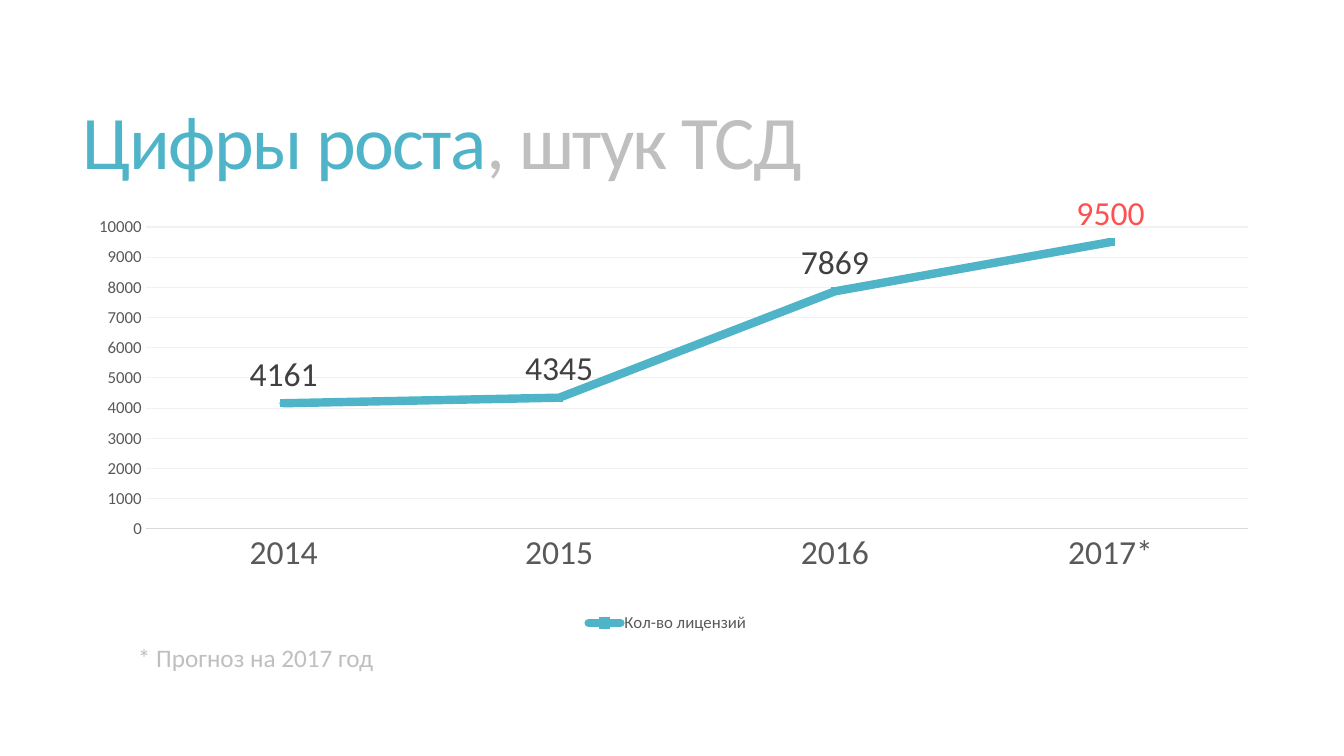
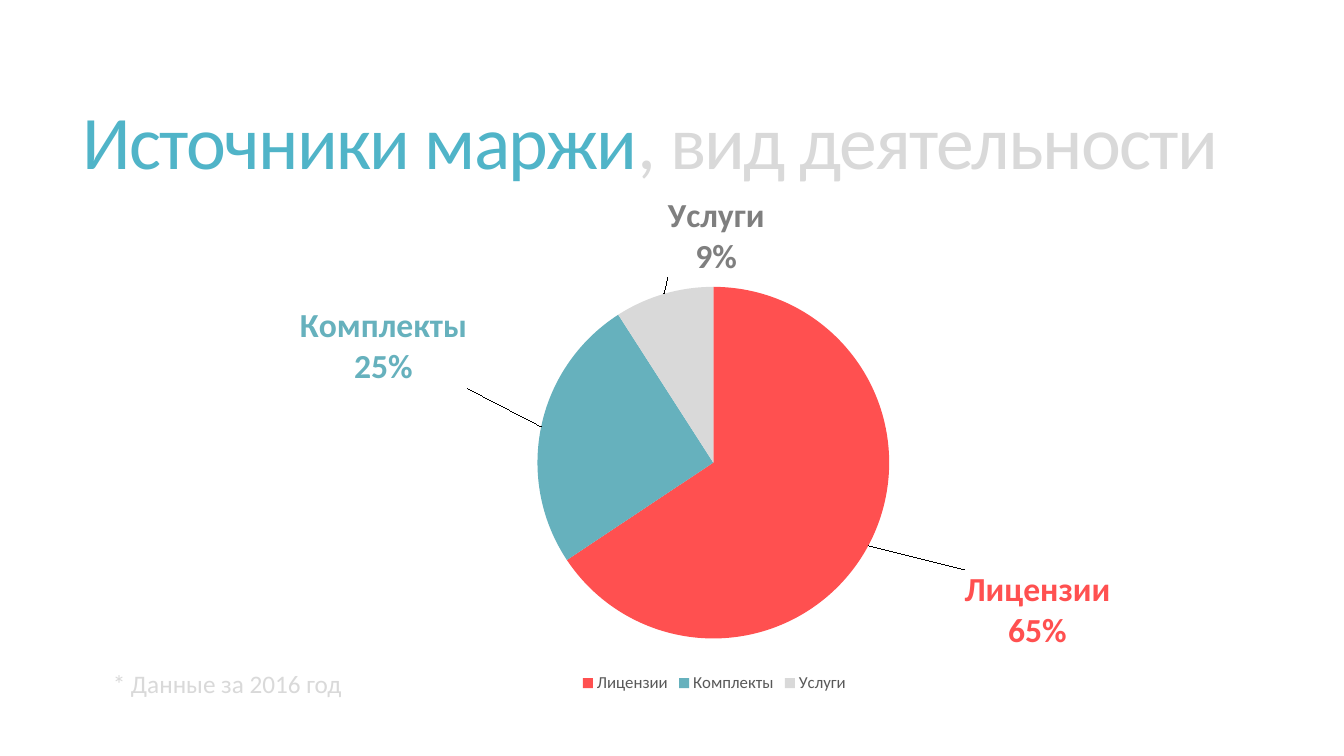
from dataclasses import dataclass

from lxml import etree
from pptx import Presentation
from pptx.chart.chart import Chart
from pptx.chart.data import CategoryChartData
from pptx.dml.color import RGBColor
from pptx.enum.chart import XL_CHART_TYPE, XL_LABEL_POSITION, XL_LEGEND_POSITION, XL_TICK_MARK
from pptx.enum.text import MSO_ANCHOR, MSO_AUTO_SIZE, PP_ALIGN
from pptx.oxml.ns import qn
from pptx.slide import Slide
from pptx.text.text import Font
from pptx.util import Inches, Pt

LINE, PIE = XL_CHART_TYPE.LINE, XL_CHART_TYPE.PIE
ABOVE, OUTSIDE = XL_LABEL_POSITION.ABOVE, XL_LABEL_POSITION.OUTSIDE_END
BOTTOM = XL_LEGEND_POSITION.BOTTOM
NO_TICK = XL_TICK_MARK.NONE
MIDDLE, LEFT = MSO_ANCHOR.MIDDLE, PP_ALIGN.LEFT
GROW = MSO_AUTO_SIZE.SHAPE_TO_FIT_TEXT

FACE = "Calibri"
TEAL, RED, SEA = "50B4C8", "FF5050", "66B1BD"
SILVER, PALE, FAINT = "BFBFBF", "D9D9D9", "F2F2F2"
DARK, INK, GREY = "404040", "595959", "7F7F7F"

Box = tuple[float, float, float, float]


@dataclass
class Page:
    lead: str
    rest: str
    tint: str
    note: str
    spot: Box


@dataclass
class Slice:
    name: str
    share: int
    fill: str
    ink: str
    shift: tuple[float, float]


GROWTH = Page("Цифры роста", ", штук ТСД", SILVER,
              "* Прогноз на 2017 год", (1.27, 6.32, 2.56, 0.4))
MARGIN = Page("Источники маржи", ", вид деятельности", PALE,
              "* Данные за 2016 год", (1.02, 6.58, 2.48, 0.4))

SALES = {"2014": 4161, "2015": 4345, "2016": 7869, "2017*": 9500}
SLICES = [
    Slice("Лицензии", 65, RED, RED, (0.08, 0.04)),
    Slice("Комплекты", 25, SEA, SEA, (-0.06, -0.07)),
    Slice("Услуги", 9, PALE, GREY, (0.09, -0.02)),
]


def color(code: str) -> RGBColor:
    return RGBColor.from_string(code)


def style(font: Font, size: float, code: str, bold: bool = False) -> None:
    font.name, font.size, font.bold = FACE, Pt(size), bold
    font.color.rgb = color(code)


def place(host: etree._Element, index: int, **parts: str | float) -> None:
    for old in host.findall(qn("c:layout")):
        host.remove(old)
    layout = etree.Element(qn("c:layout"))
    manual = etree.SubElement(layout, qn("c:manualLayout"))
    for tag, value in parts.items():
        etree.SubElement(manual, qn(f"c:{tag}")).set("val", str(value))
    host.insert(index, layout)


def frame(chart: Chart, box: Box) -> None:
    x, y, w, h = box
    area = chart._chartSpace.find(".//" + qn("c:plotArea"))
    place(area, 0, layoutTarget="inner", xMode="edge", yMode="edge", x=x, y=y, w=w, h=h)


def add_page(deck: Presentation, page: Page) -> Slide:
    slide = deck.slides.add_slide(deck.slide_layouts[5])
    title = slide.shapes.title
    title.left, title.top, title.width, title.height = map(Inches, (0.72, 0.55, 11.78, 1.81))
    title.text_frame.vertical_anchor = MIDDLE
    para = title.text_frame.paragraphs[0]
    para.alignment, para.line_spacing = LEFT, 0.85
    for text, code in ((page.lead, TEAL), (page.rest, page.tint)):
        run = para.add_run()
        run.text = text
        style(run.font, 54, code)
        run._r.get_or_add_rPr().set("spc", "-120")
    return slide


def add_note(slide: Slide, page: Page) -> None:
    text = slide.shapes.add_textbox(*map(Inches, page.spot)).text_frame
    text.word_wrap, text.auto_size = False, GROW
    text.text = page.note
    style(text.paragraphs[0].font, 18, page.tint)


def add_chart(slide: Slide, kind: XL_CHART_TYPE, box: Box, name: str,
              values: dict[str, int]) -> Chart:
    data = CategoryChartData()
    data.categories = list(values)
    data.add_series(name, list(values.values()))
    chart = slide.shapes.add_chart(kind, *map(Inches, box), data).chart
    style(chart.font, 10, "000000")
    chart.has_title, chart.has_legend = False, True
    chart.legend.position = BOTTOM
    chart.legend.include_in_layout = False
    style(chart.legend.font, 12, INK)
    return chart


def draw_growth(slide: Slide) -> None:
    chart = add_chart(slide, LINE, (0.74, 1.85, 11.76, 4.47), "Кол-во лицензий", SALES)
    frame(chart, (0.06, 0.09, 0.93, 0.67))
    years, scale = chart.category_axis, chart.value_axis
    for axis, size in ((years, 24), (scale, 12)):
        axis.major_tick_mark = axis.minor_tick_mark = NO_TICK
        style(axis.tick_labels.font, size, INK)
    years.format.line.color.rgb = color(PALE)
    years.format.line.width = Pt(0.75)
    scale.format.line.fill.background()
    scale.minimum_scale, scale.maximum_scale, scale.major_unit = 0, 10000, 1000
    grid = scale.major_gridlines.format.line
    grid.color.rgb, grid.width = color(FAINT), Pt(0.75)

    series = chart.plots[0].series[0]
    series.smooth = False
    series.marker.style = None
    line = series.format.line
    line.color.rgb, line.width = color(TEAL), Pt(6)
    series._element.find(".//" + qn("a:ln")).set("cap", "rnd")
    labels = series.data_labels
    labels.show_value, labels.position = True, ABOVE
    style(labels.font, 24, DARK)
    last = series.points[len(SALES) - 1].data_label
    style(last.font, 24, RED)
    last.position = ABOVE


def draw_margin(slide: Slide) -> None:
    values = {part.name: part.share for part in SLICES}
    chart = add_chart(slide, PIE, (1.21, 1.94, 11.29, 5.28), "Series 1", values)
    frame(chart, (0.365, 0.153, 0.309, 0.698))
    place(chart.legend._element, 1, xMode="edge", yMode="edge", x=0.4, y=0.89)
    plot = chart.plots[0]
    plot.vary_by_categories = True
    series = plot.series[0]
    labels = series.data_labels
    labels.show_category_name = labels.show_percentage = True
    labels.show_value = False
    labels.position = OUTSIDE
    style(labels.font, 24, "000000", True)
    root = labels._element
    lead = root.find(qn("c:showLeaderLines"))
    if lead is None:
        lead = etree.SubElement(root, qn("c:showLeaderLines"))
    lead.set("val", "1")
    for index, part in enumerate(SLICES):
        point = series.points[index]
        point.format.fill.solid()
        point.format.fill.fore_color.rgb = color(part.fill)
        label = point.data_label
        text = label.text_frame
        text.text = f"{part.name}\n{part.share}%"
        for para in text.paragraphs:
            for run in para.runs:
                style(run.font, 24, part.ink, True)
        label.position = OUTSIDE
    for host, part in zip(root.findall(qn("c:dLbl")), SLICES):
        place(host, 1, x=part.shift[0], y=part.shift[1])


def main() -> None:
    deck = Presentation()
    deck.slide_width, deck.slide_height = Inches(13.33), Inches(7.5)
    for page, draw in ((GROWTH, draw_growth), (MARGIN, draw_margin)):
        slide = add_page(deck, page)
        draw(slide)
        add_note(slide, page)
    deck.save("out.pptx")


if __name__ == "__main__":
    main()
